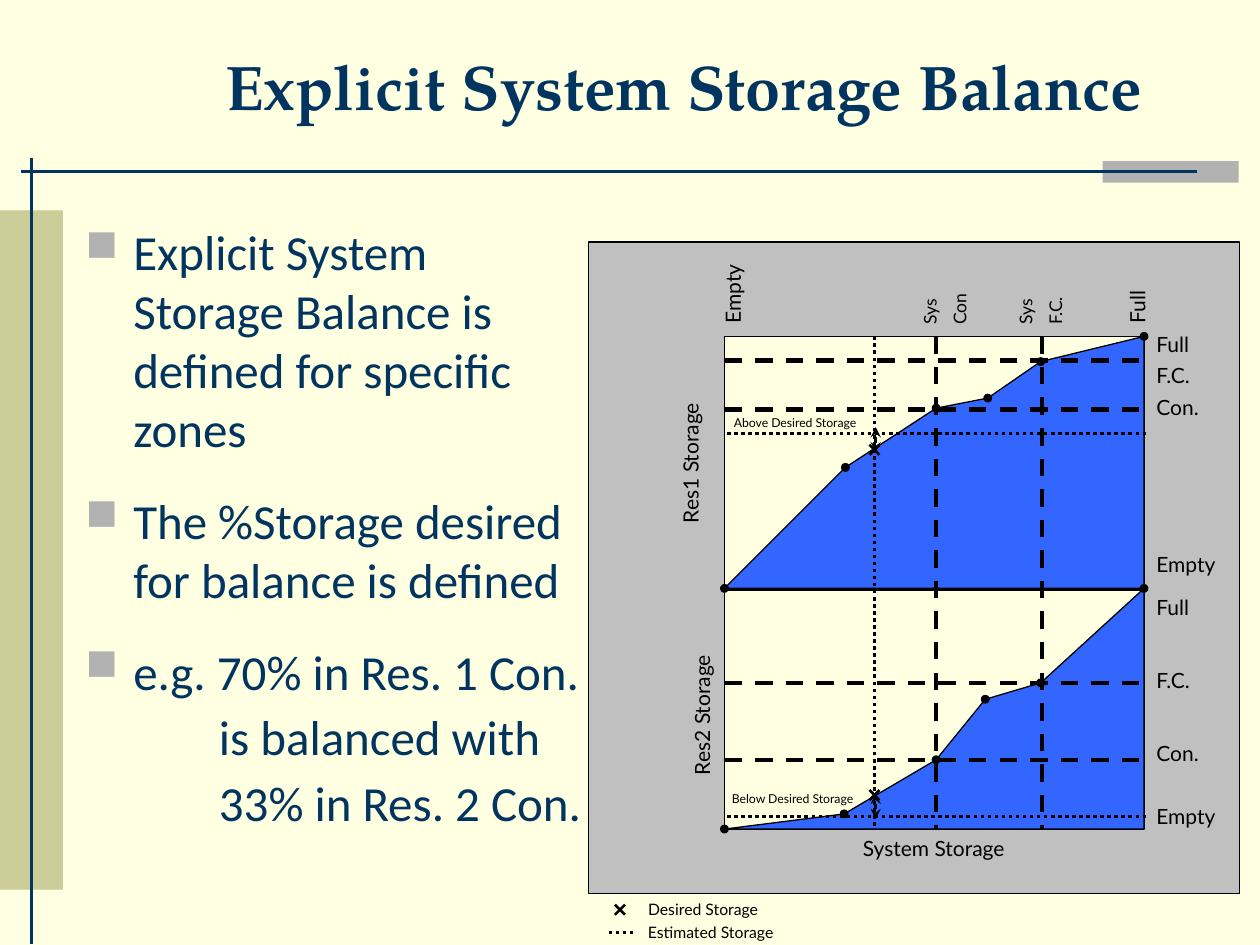
from dataclasses import dataclass

from lxml import etree
from pptx import Presentation
from pptx.dml.color import RGBColor
from pptx.enum import dml, shapes, text
from pptx.oxml import ns
from pptx.util import Inches, Pt

CREAM = RGBColor(0xFF, 0xFF, 0xE1)
NAVY = RGBColor(0x01, 0x34, 0x5F)
GRAY = RGBColor(0xB2, 0xB2, 0xB2)
PANEL = RGBColor(0xC0, 0xC0, 0xC0)
OLIVE = RGBColor(0xCC, 0xCC, 0x99)
BLUE = RGBColor(0x33, 0x66, 0xFF)
BLACK = RGBColor(0, 0, 0)

LEFT, RIGHT, TOP, MIDDLE, BOTTOM = 5.75, 9.08, 2.67, 4.67, 6.58
DESIRED_X = 6.94
CENTER = text.PP_ALIGN.CENTER
DASH = dml.MSO_LINE.DASH
DOT = dml.MSO_LINE.ROUND_DOT


@dataclass
class Label:
    text: str
    left: float
    top: float
    width: float = 0.67
    height: float = 0.3
    size: float = 12
    rotation: float = 0
    align: text.PP_ALIGN = text.PP_ALIGN.LEFT


@dataclass
class Reservoir:
    bottom: float
    knots: list[tuple[float, float]]
    levels: list[float]
    estimated: float
    desired: float
    arrow_top: float


@dataclass
class Bullet:
    text: str
    marked: bool = True
    space: float = 19


RESERVOIRS = [
    Reservoir(MIDDLE, [(LEFT, MIDDLE), (6.71, 3.71), (7.43, 3.24), (7.84, 3.16),
                       (8.26, 2.87), (RIGHT, TOP)], [2.86, 3.25], 3.44, 3.57, 3.39),
    Reservoir(BOTTOM, [(LEFT, BOTTOM), (6.7, 6.46), (7.43, 6.03), (7.82, 5.55),
                       (8.26, 5.42), (RIGHT, MIDDLE)], [5.42, 6.03], 6.48, 6.31, 6.3),
]

LABELS = [
    Label("System Storage", 6.75, 6.58, 1.5),
    Label("Res1 Storage", 4.73, 3.35, 1.5, rotation=270),
    Label("Res2 Storage", 4.82, 5.35, 1.5, rotation=270),
    Label("Empty", 5.48, 2.18, rotation=270),
    Label("Full", 8.69, 2.18, rotation=270),
    Label("Sys\nCon", 7.17, 2.08, height=0.52, size=10, rotation=270),
    Label("Sys\nF.C.", 7.93, 2.08, height=0.52, size=10, rotation=270),
    Label("Desired Storage", 4.9, 7.09, 1.36, 0.25, 9, align=CENTER),
    Label("Estimated Storage", 4.96, 7.27, 1.36, 0.25, 9, align=CENTER),
    Label("Above Desired Storage", 5.65, 3.25, 1.32, 0.22, 7, align=CENTER),
    Label("Below Desired Storage", 5.63, 6.23, 1.32, 0.22, 7, align=CENTER),
] + [Label(name, RIGHT, top) for name, top in [
    ("Full", 2.58), ("F.C.", 2.83), ("Con.", 3.08), ("Empty", 4.33),
    ("Full", 4.67), ("F.C.", 5.25), ("Con.", 5.83), ("Empty", 6.33)]]

BULLETS = [
    Bullet("Explicit System Storage Balance is defined for specific zones", space=0),
    Bullet("The %Storage desired for balance is defined"),
    Bullet("e.g. 70% in Res. 1 Con."),
    Bullet("is balanced with", False, 4),
    Bullet("33% in Res. 2 Con.", False, 4),
]


def write(paragraph, content: str, *, font="Lato", size=12.0, color=BLACK,
          bold=False, align=text.PP_ALIGN.LEFT, space=0.0) -> None:
    paragraph.text = content
    paragraph.alignment = align
    paragraph.space_before = Pt(space)
    paragraph.font.name = font
    paragraph.font.size = Pt(size)
    paragraph.font.bold = bold
    paragraph.font.color.rgb = color


def style(shape, fill: RGBColor, outline: RGBColor | None) -> None:
    shape.shadow.inherit = False
    shape.fill.solid()
    shape.fill.fore_color.rgb = fill
    if outline is None:
        shape.line.fill.background()
    else:
        shape.line.color.rgb = outline
        shape.line.width = Pt(0.75)


def add_block(slide, left: float, top: float, width: float, height: float,
              fill: RGBColor, outline: RGBColor | None = None,
              kind=shapes.MSO_SHAPE.RECTANGLE) -> None:
    shape = slide.shapes.add_shape(
        kind, Inches(left), Inches(top), Inches(width), Inches(height))
    style(shape, fill, outline)


def add_line(slide, x1: float, y1: float, x2: float, y2: float, width: float,
             color=BLACK, dash=None, arrows=False) -> None:
    line = slide.shapes.add_connector(
        shapes.MSO_CONNECTOR.STRAIGHT, Inches(x1), Inches(y1), Inches(x2), Inches(y2))
    line.line.color.rgb = color
    line.line.width = Pt(width)
    if dash is not None:
        line.line.dash_style = dash
    properties = line._element.spPr
    if arrows:
        for end in ("a:headEnd", "a:tailEnd"):
            etree.SubElement(properties.find(ns.qn("a:ln")), ns.qn(end), type="stealth")
    etree.SubElement(properties, ns.qn("a:effectLst"))


def add_cross(slide, x: float, y: float) -> None:
    half = 0.04
    for slope in (half, -half):
        add_line(slide, x - half, y - slope, x + half, y + slope, 1.5)


def add_area(slide, reservoir: Reservoir) -> None:
    points = [(Inches(x), Inches(y))
              for x, y in reservoir.knots + [(RIGHT, reservoir.bottom)]]
    builder = slide.shapes.build_freeform(*points[0])
    builder.add_line_segments(points[1:], close=True)
    style(builder.convert_to_shape(), BLUE, BLACK)


def add_label(slide, label: Label) -> None:
    box = slide.shapes.add_textbox(Inches(label.left), Inches(label.top),
                                   Inches(label.width), Inches(label.height))
    box.rotation = label.rotation
    frame = box.text_frame
    frame.word_wrap = True
    for index, content in enumerate(label.text.split("\n")):
        paragraph = frame.add_paragraph() if index else frame.paragraphs[0]
        write(paragraph, content, size=label.size, align=label.align,
              space=label.size / 2 if index else 0)


def add_bullets(slide) -> None:
    box = slide.shapes.add_textbox(Inches(0.58), Inches(1.71), Inches(4.17), Inches(4.96))
    frame = box.text_frame
    frame.word_wrap = True
    for index, bullet in enumerate(BULLETS):
        paragraph = frame.add_paragraph() if index else frame.paragraphs[0]
        properties = paragraph._p.get_or_add_pPr()
        properties.set("marL", str(Inches(0.38 if bullet.marked else 1.06)))
        properties.set("indent", str(Inches(-0.38 if bullet.marked else 0)))
        if bullet.marked:
            color = etree.SubElement(properties, ns.qn("a:buClr"))
            etree.SubElement(color, ns.qn("a:srgbClr"), val=str(GRAY))
            etree.SubElement(properties, ns.qn("a:buSzPct"), val="90000")
            etree.SubElement(properties, ns.qn("a:buChar"), char="■")
        write(paragraph, bullet.text, font="Calibri", size=28, color=NAVY,
              space=bullet.space)


def add_diagram(slide) -> None:
    add_block(slide, 4.67, 1.92, 5.17, 5.17, PANEL, BLACK)
    add_block(slide, LEFT, TOP, RIGHT - LEFT, BOTTOM - TOP, CREAM, BLACK)
    add_line(slide, LEFT, MIDDLE, RIGHT, MIDDLE, 3)
    for reservoir in RESERVOIRS:
        add_area(slide, reservoir)
        for level in reservoir.levels:
            add_line(slide, LEFT, level, RIGHT, level, 2.5, dash=DASH)
        add_line(slide, LEFT + 0.02, reservoir.estimated,
                 RIGHT + 0.02, reservoir.estimated, 2, dash=DOT)
    for x in (7.43, 8.27):
        add_line(slide, x, TOP, x, BOTTOM, 2.5, dash=DASH)
    add_line(slide, DESIRED_X, TOP, DESIRED_X, BOTTOM, 2, dash=DOT)
    for reservoir in RESERVOIRS:
        add_cross(slide, DESIRED_X, reservoir.desired)
        add_line(slide, 6.95, reservoir.arrow_top, 6.95, reservoir.arrow_top + 0.2,
                 1.5, arrows=True)
        for x, y in reservoir.knots:
            add_block(slide, x - 0.03, y - 0.03, 0.06, 0.06, BLACK, BLACK,
                      shapes.MSO_SHAPE.OVAL)
    add_cross(slide, 4.92, 7.22)
    add_line(slide, 4.83, 7.4, 5.03, 7.4, 2, dash=DOT)
    for label in LABELS:
        add_label(slide, label)


def main() -> None:
    presentation = Presentation()
    presentation.slide_width, presentation.slide_height = Inches(10), Inches(7.5)
    slide = presentation.slides.add_slide(presentation.slide_layouts[5])
    slide.background.fill.solid()
    slide.background.fill.fore_color.rgb = CREAM
    add_block(slide, 8.75, 1.28, 1.08, 0.17, GRAY)
    add_line(slide, 0.17, 1.36, 9.5, 1.36, 1.5, NAVY)
    add_block(slide, 0, 1.67, 0.5, 5.39, OLIVE)
    add_line(slide, 0.25, 1.25, 0.25, 7.49, 1.5, NAVY)
    title = slide.shapes.title
    title.left, title.top = Inches(1.69), Inches(0.08)
    title.width, title.height = Inches(8.07), Inches(1.19)
    title.text_frame.vertical_anchor = text.MSO_ANCHOR.MIDDLE
    write(title.text_frame.paragraphs[0], "Explicit System Storage Balance",
          font="TeX Gyre Pagella", size=36, color=NAVY, bold=True)
    add_bullets(slide)
    add_diagram(slide)
    presentation.save("out.pptx")


if __name__ == "__main__":
    main()
